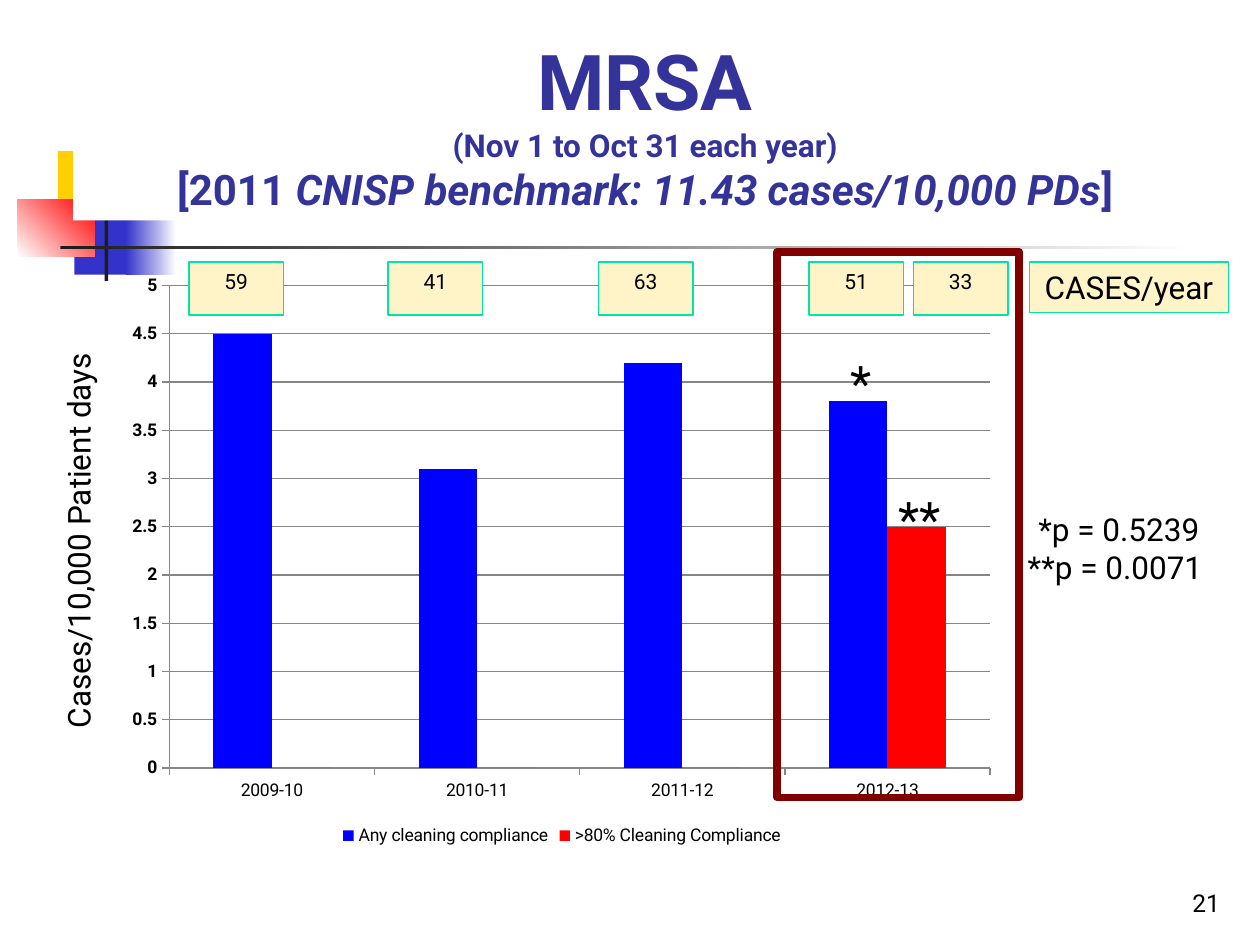
import pptx
import pptx.chart.data
import pptx.dml.color
import pptx.enum.chart
import pptx.enum.shapes
import pptx.enum.text
import pptx.util
from lxml import etree
from pptx.util import Inches, Pt

FONT = "Roboto"
COLORS = {
    "black": "000000", "white": "FFFFFF", "ink": "1C1C1C", "title": "333399",
    "yellow": "FFCF01", "indigo": "3333CC", "red": "FF0000", "blue": "0000FF",
    "cream": "FFF4C8", "mint": "00E4A8", "maroon": "800000", "grid": "868686",
}
ALIGN = pptx.enum.text.PP_ALIGN
ANCHOR = pptx.enum.text.MSO_ANCHOR


def rgb(name):
    return pptx.dml.color.RGBColor.from_string(COLORS[name])


def inches(box):
    return [Inches(length) for length in box]


def style_font(font, size, color="black", bold=False):
    font.name, font.size, font.bold = FONT, Pt(size), bold
    font.color.rgb = rgb(color)


def write(frame, text, size, align=ALIGN.CENTER, anchor=ANCHOR.TOP):
    frame.word_wrap = True
    frame.vertical_anchor = anchor
    paragraph = frame.paragraphs[0]
    paragraph.text = text
    paragraph.alignment = align
    style_font(paragraph.font, size)


def add_label(slide, box, text, size, rotation=0, **layout):
    label = slide.shapes.add_textbox(*inches(box))
    label.rotation = rotation
    write(label.text_frame, text, size, **layout)


def add_rect(slide, box, fill=None, fade_to=None, angle=0, line=None, width=0.75):
    rect = slide.shapes.add_shape(
        pptx.enum.shapes.MSO_SHAPE.RECTANGLE, *inches(box))
    rect.shadow.inherit = False
    if fade_to:
        rect.fill.gradient()
        rect.fill.gradient_angle = angle
        for stop, color in zip(rect.fill.gradient_stops, (fill, fade_to)):
            stop.color.rgb = rgb(color)
    elif fill:
        rect.fill.solid()
        rect.fill.fore_color.rgb = rgb(fill)
    else:
        rect.fill.background()
    if line:
        rect.line.color.rgb = rgb(line)
        rect.line.width = Pt(width)
    else:
        rect.line.fill.background()
    return rect


def add_ornament(slide, left, top):
    """Overlapping colour blocks crossed by two dark rules."""
    blocks = [
        ((0.32, 0.12, 0.48, 0.52), "yellow", None, 0),
        ((0.45, 0.58, 0.46, 0.52), "indigo", None, 0),
        ((0.86, 0.58, 0.4, 0.52), "indigo", "white", 0),
        ((0, 0.5, 0.61, 0.46), "white", "red", 45),
        ((0.69, 0, 0.03, 1.15), "ink", None, 0),
        ((0.34, 0.87, 9, 0.03), "ink", "white", 0),
    ]
    for (x, y, width, height), fill, fade_to, angle in blocks:
        add_rect(slide, (left + x, top + y, width, height), fill, fade_to, angle)


def place_title(slide, box):
    title = slide.shapes.title
    title.left, title.top, title.width, title.height = inches(box)
    title.fill.solid()
    title.fill.fore_color.rgb = rgb("white")
    # Bring the title in front of the ornament
    title._element.getparent().append(title._element)
    frame = title.text_frame
    frame.word_wrap = True
    frame.auto_size = pptx.enum.text.MSO_AUTO_SIZE.NONE
    frame.vertical_anchor = ANCHOR.BOTTOM
    paragraph = frame.paragraphs[0]
    paragraph.alignment = ALIGN.CENTER
    lines = [
        (44, [("MRSA", False)]),
        (18, [("(Nov 1 to Oct 31 each year)", False)]),
        (24, [("[2011 ", False),
              ("CNISP benchmark: 11.43 cases/10,000 PDs", True), ("]", False)]),
    ]
    for index, (size, parts) in enumerate(lines):
        if index:
            paragraph.add_line_break()
        for text, italic in parts:
            run = paragraph.add_run()
            run.text = text
            style_font(run.font, size, "title", bold=True)
            run.font.italic = italic


def set_plot_area(chart, x, y, width, height):
    """Fix the inner plot area, in fractions of the chart."""
    plot_area = chart._chartSpace.chart.plotArea
    for old in plot_area.findall("{*}layout"):
        plot_area.remove(old)
    uri = etree.QName(plot_area).namespace
    layout = etree.Element(f"{{{uri}}}layout")
    manual = etree.SubElement(layout, f"{{{uri}}}manualLayout")
    for tag, value in (("layoutTarget", "inner"), ("xMode", "edge"),
                       ("yMode", "edge"), ("x", x), ("y", y),
                       ("w", width), ("h", height)):
        etree.SubElement(manual, f"{{{uri}}}{tag}", val=str(value))
    plot_area.insert(0, layout)


def add_rate_chart(slide, box):
    rates = pptx.chart.data.CategoryChartData()
    rates.categories = ["2009-10", "2010-11", "2011-12", "2012-13"]
    rates.add_series("Any cleaning compliance", (4.5, 3.1, 4.2, 3.8))
    rates.add_series(">80% Cleaning Compliance", (0, 0, 0, 2.5))
    chart = slide.shapes.add_chart(
        pptx.enum.chart.XL_CHART_TYPE.COLUMN_CLUSTERED, *inches(box), rates).chart
    chart.has_title = False
    style_font(chart.font, 10)
    set_plot_area(chart, 0.06, 0.04, 0.92, 0.82)

    plot = chart.plots[0]
    plot.gap_width, plot.overlap, plot.vary_by_categories = 150, 0, False
    for series, color in zip(plot.series, ("blue", "red")):
        series.format.fill.solid()
        series.format.fill.fore_color.rgb = rgb(color)

    years, scale = chart.category_axis, chart.value_axis
    for axis in (years, scale):
        axis.major_tick_mark = pptx.enum.chart.XL_TICK_MARK.OUTSIDE
        axis.format.line.color.rgb = rgb("grid")
    style_font(years.tick_labels.font, 10)
    style_font(scale.tick_labels.font, 10, bold=True)
    scale.minimum_scale, scale.maximum_scale, scale.major_unit = 0, 5, 0.5
    scale.tick_labels.number_format = "General"
    scale.tick_labels.number_format_is_linked = False
    scale.major_gridlines.format.line.color.rgb = rgb("grid")

    chart.has_legend = True
    chart.legend.position = pptx.enum.chart.XL_LEGEND_POSITION.BOTTOM
    chart.legend.include_in_layout = False
    style_font(chart.legend.font, 10)


def add_case_counts(slide, top):
    counts = [(1.5, "59"), (3.08, "41"), (4.75, "63"), (6.42, "51"), (7.25, "33")]
    tags = [((left, top, 0.75, 0.42), cases, 12) for left, cases in counts]
    tags.append(((8.17, top, 1.58, 0.4), "CASES/year", 18))
    for box, text, size in tags:
        tag = add_rect(slide, box, "cream", line="mint")
        write(tag.text_frame, text, size)


def main():
    deck = pptx.Presentation()
    deck.slide_width, deck.slide_height = Inches(10), Inches(7.5)
    slide = deck.slides.add_slide(deck.slide_layouts[5])

    add_ornament(slide, 0.14, 1.08)
    place_title(slide, (0.58, 0.23, 9.08, 1.52))

    # Axis caption, chart and yearly counts
    add_label(slide, (-1.09, 4.09, 3.42, 0.4), "Cases/10,000 Patient days", 18, 270)
    add_rate_chart(slide, (0.92, 2.08, 7.08, 4.67))
    add_case_counts(slide, 2.08)

    # Significance marks and their values
    add_label(slide, (6.58, 2.75, 0.5, 0.57), "*", 28)
    add_label(slide, (6.92, 3.83, 0.75, 0.57), "**", 28)
    add_label(slide, (7.92, 4, 1.92, 0.71), "*p = 0.5239\v**p = 0.0071 ", 18)

    # Frame around the last year
    add_rect(slide, (6.17, 2, 1.92, 4.33), line="maroon", width=4.5)

    # Page number
    add_label(slide, (7.7, 6.83, 2.08, 0.5), "21", 14,
              align=ALIGN.RIGHT, anchor=ANCHOR.BOTTOM)
    deck.save("out.pptx")


if __name__ == "__main__":
    main()
